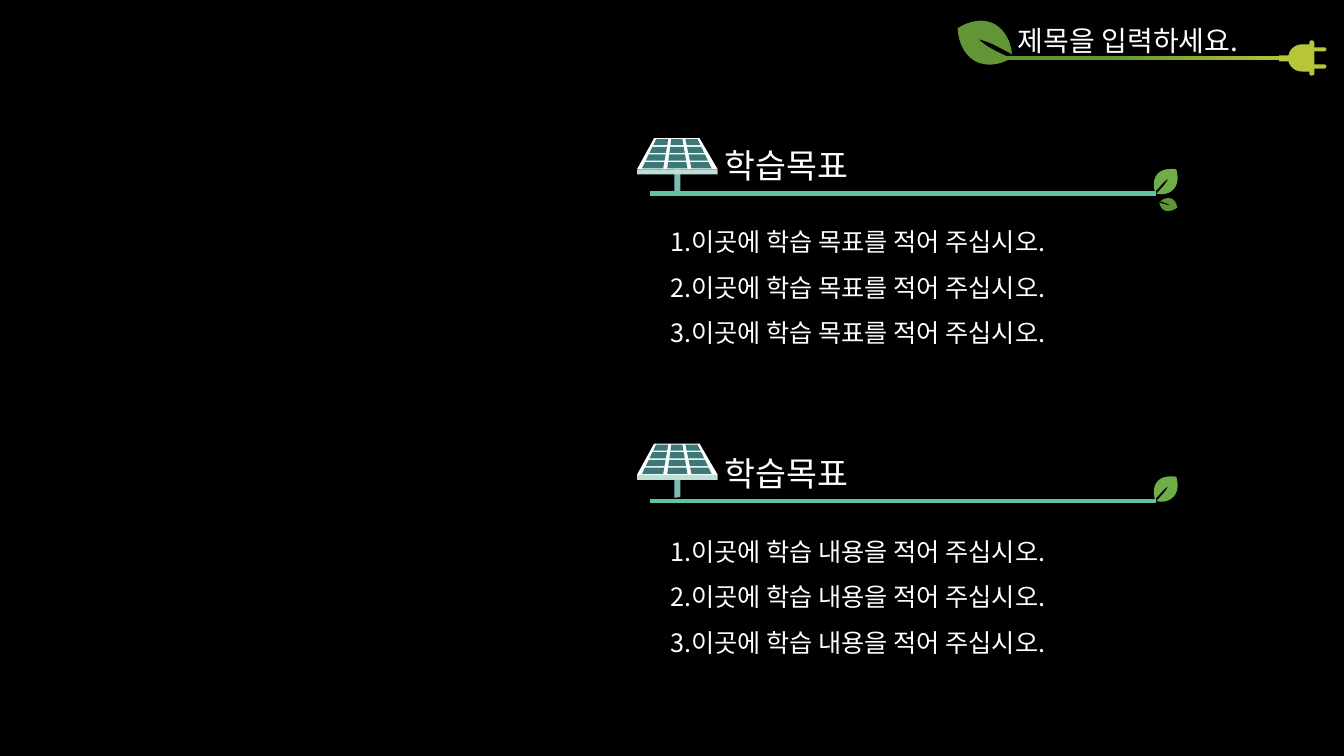
from lxml import etree
from pptx import Presentation
from pptx.dml.color import RGBColor
from pptx.enum.shapes import MSO_CONNECTOR, MSO_SHAPE
from pptx.enum.text import MSO_AUTO_SIZE, PP_ALIGN
from pptx.oxml.ns import qn
from pptx.util import Pt

STRAIGHT = MSO_CONNECTOR.STRAIGHT
RECTANGLE = MSO_SHAPE.RECTANGLE
FIT_SHAPE = MSO_AUTO_SIZE.SHAPE_TO_FIT_TEXT
LEFT, CENTER = PP_ALIGN.LEFT, PP_ALIGN.CENTER

FONT = "Noto Sans CJK KR"
BLACK, WHITE = "000000", "FFFFFF"
DARK_LEAF, LIGHT_LEAF, PLUG = "629535", "70AD47", "B6C638"
POST, CELL, LEDGE, RULE = "7EBAB2", "3C7878", "BBE0D5", "5EC69C"
OUTLINE_UNIT = 0.72
CURVE_STEPS = 8

TITLE_LEAF = [
    [(41, 34)],
    [(32, 30), (25, 25), (21, 21)],
    [(26, 22), (34, 25), (43, 30)],
    [(47, 32), (51, 34), (54, 36)],
    [(53, 23), (47, 12), (37, 6)],
    [(26, 0), (13, 2), (0, 10)],
    [(1, 25), (7, 37), (18, 43)],
    [(28, 48), (41, 47), (53, 40)],
    [(49, 38), (45, 36), (41, 34)],
]
UPPER_LEAF = [
    [(8, 19)],
    [(11, 15), (15, 12), (17, 10)],
    [(16, 13), (13, 17), (10, 20)],
    [(8, 22), (7, 24), (5, 25)],
    [(12, 27), (19, 25), (23, 20)],
    [(27, 15), (27, 8), (25, 1)],
    [(17, 0), (10, 1), (6, 6)],
    [(2, 11), (2, 18), (4, 24)],
    [(5, 22), (6, 21), (8, 19)],
]
LOWER_LEAF = [
    [(4, 7)],
    [(7, 8), (10, 9), (11, 9)],
    [(10, 8), (8, 7), (5, 6)],
    [(3, 5), (2, 5), (1, 5)],
    [(4, 2), (8, 1), (12, 2)],
    [(15, 3), (17, 6), (18, 11)],
    [(14, 14), (10, 15), (6, 14)],
    [(3, 13), (1, 10), (0, 6)],
    [(1, 6), (3, 7), (4, 7)],
]
PLUG_BODY = [
    [(23, 0)],
    [(25, 0), (26, 1), (26, 3)],
    [(26, 33)],
    [(26, 34), (25, 35), (23, 35)],
    [(22, 35), (21, 34), (21, 33)],
    [(21, 31)],
    [(14, 31)],
    [(6, 31), (0, 25), (0, 18)],
    [(0, 10), (6, 4), (14, 4)],
    [(21, 4)],
    [(21, 3)],
    [(21, 1), (22, 0), (23, 0)],
]
PLUG_PRONG = [
    [(0, 0)],
    [(18, 0)],
    [(19, 0), (20, 1), (20, 2)],
    [(20, 3), (19, 4), (18, 4)],
    [(0, 4)],
]
PANEL_COLUMNS = [
    ((13.68, 3.6), (22.32, 18.72)),
    ((24.48, 21.6), (32.4, 36)),
    ((34.56, 38.88), (43.2, 53.28)),
]


def rgb(color):
    return RGBColor.from_string(color)


def paint(shape, color):
    shape.shadow.inherit = False
    shape.fill.solid()
    shape.fill.fore_color.rgb = rgb(color)
    shape.line.fill.background()


def polygon(shapes, left, top, points, color):
    corners = [(Pt(left + x), Pt(top + y)) for x, y in points]
    builder = shapes.build_freeform(*corners[0])
    builder.add_line_segments(corners[1:], close=True)
    paint(builder.convert_to_shape(), color)


def outline(shapes, left, top, segments, color):
    points = []
    for segment in segments:
        if len(segment) == 1:
            points += segment
            continue
        controls = [points[-1], *segment]
        for step in range(1, CURVE_STEPS + 1):
            t = step / CURVE_STEPS
            weights = ((1 - t) ** 3, 3 * t * (1 - t) ** 2, 3 * t * t * (1 - t), t ** 3)
            points.append(tuple(sum(w * c[axis] for w, c in zip(weights, controls))
                                for axis in (0, 1)))
    scaled = [(x * OUTLINE_UNIT, y * OUTLINE_UNIT) for x, y in points]
    polygon(shapes, left, top, scaled, color)


def bar(shapes, left, top, width, height, color):
    shape = shapes.add_shape(RECTANGLE, Pt(left), Pt(top), Pt(width), Pt(height))
    paint(shape, color)
    return shape


def write(shapes, left, top, width, height, lines, size, align=LEFT, numbered=False):
    frame = shapes.add_textbox(Pt(left), Pt(top), Pt(width), Pt(height)).text_frame
    frame.word_wrap = False
    frame.auto_size = FIT_SHAPE
    frame.text = "\n".join(lines)
    for paragraph in frame.paragraphs:
        paragraph.alignment = align
        if numbered:
            properties = paragraph._p.get_or_add_pPr()
            properties.set("marL", "0")
            properties.set("indent", str(-Pt(27)))
            etree.SubElement(properties, qn("a:buAutoNum"), type="arabicPeriod")
            paragraph.line_spacing = 1.5
        for run in paragraph.runs:
            run.font.size = Pt(size)
            run.font.color.rgb = rgb(WHITE)
            run.font.name = FONT
            etree.SubElement(run._r.get_or_add_rPr(), qn("a:ea"), typeface=FONT)


def title_banner(slide, left, top, title):
    shapes = slide.shapes.add_group_shape().shapes
    write(shapes, left + 36, top, 187.92, 31.68, [title], 20)
    cord = bar(shapes, left + 27.36, top + 27.36, 209.52, 2.88, DARK_LEAF)
    cord.fill.gradient()
    cord.fill.gradient_angle = 0
    for stop, position, color in zip(cord.fill.gradient_stops, (0.38, 1), (DARK_LEAF, PLUG)):
        stop.position = position
        stop.color.rgb = rgb(color)
    outline(shapes, left, top, TITLE_LEAF, DARK_LEAF)
    bar(shapes, left + 229.68, top + 26.64, 9.36, 4.32, PLUG)
    outline(shapes, left + 236.16, top + 15.84, PLUG_BODY, PLUG)
    for prong_drop in (20.88, 33.12):
        outline(shapes, left + 249.12, top + prong_drop, PLUG_PRONG, PLUG)


def solar_panel(slide, left, top):
    shapes = slide.shapes.add_group_shape().shapes
    post = [(26.64, 22.32), (30.96, 22.32), (30.96, 38.16), (26.64, 38.88)]
    polygon(shapes, left, top, post, POST)
    frame = [(0, 22.32), (12.24, 0), (44.64, 0), (57.6, 22.32)]
    polygon(shapes, left, top, frame, WHITE)
    first, pitch, cell_height, slope_height = 0.72, 5.5, 4.4, 20.9
    for left_edge, right_edge in PANEL_COLUMNS:
        for row in range(4):
            upper = row * pitch
            lower = upper + cell_height
            cell = [(edge[0] + (edge[1] - edge[0]) * y / slope_height, first + y)
                    for edge, y in ((left_edge, upper), (right_edge, upper),
                                    (right_edge, lower), (left_edge, lower))]
            polygon(shapes, left, top, cell, CELL)
    bar(shapes, left, top + 22.32, 57.6, 3.6, LEDGE)


def leafy_rule(slide, left, y, width, lower_leaf):
    shapes = slide.shapes.add_group_shape().shapes
    end = left + width
    rule = shapes.add_connector(STRAIGHT, Pt(left), Pt(y), Pt(end), Pt(y))
    rule.line.color.rgb = rgb(RULE)
    rule.line.width = Pt(3)
    etree.SubElement(rule._element.spPr, qn("a:effectLst"))
    if lower_leaf:
        outline(shapes, end + 2.16, y + 2.16, LOWER_LEAF, DARK_LEAF)
    outline(shapes, end - 3.6, y - 18, UPPER_LEAF, LIGHT_LEAF)


def section(slide, left, rule_y, panel_rise, list_drop, heading, items, lower_leaf):
    write(slide.shapes, left + 7.2, rule_y + list_drop, 327.6, 105.12, items, 18, numbered=True)
    write(slide.shapes, left + 41.76, rule_y - 38.16, 111.6, 36, [heading], 24, CENTER)
    solar_panel(slide, left - 9.36, rule_y - panel_rise)
    leafy_rule(slide, left, rule_y, 361.44, lower_leaf)


def main():
    deck = Presentation()
    deck.slide_width, deck.slide_height = Pt(960), Pt(540)
    slide = deck.slides.add_slide(deck.slide_layouts[6])
    slide.background.fill.solid()
    slide.background.fill.fore_color.rgb = rgb(BLACK)
    section(slide, 464.4, 138.24, 39.6, 9.36, "학습목표",
            ["이곳에 학습 목표를 적어 주십시오."] * 3, True)
    section(slide, 464.4, 357.84, 41.04, 10.8, "학습목표",
            ["이곳에 학습 내용을 적어 주십시오."] * 3, False)
    title_banner(slide, 684, 12.96, "제목을 입력하세요.")
    deck.save("out.pptx")


if __name__ == "__main__":
    main()
